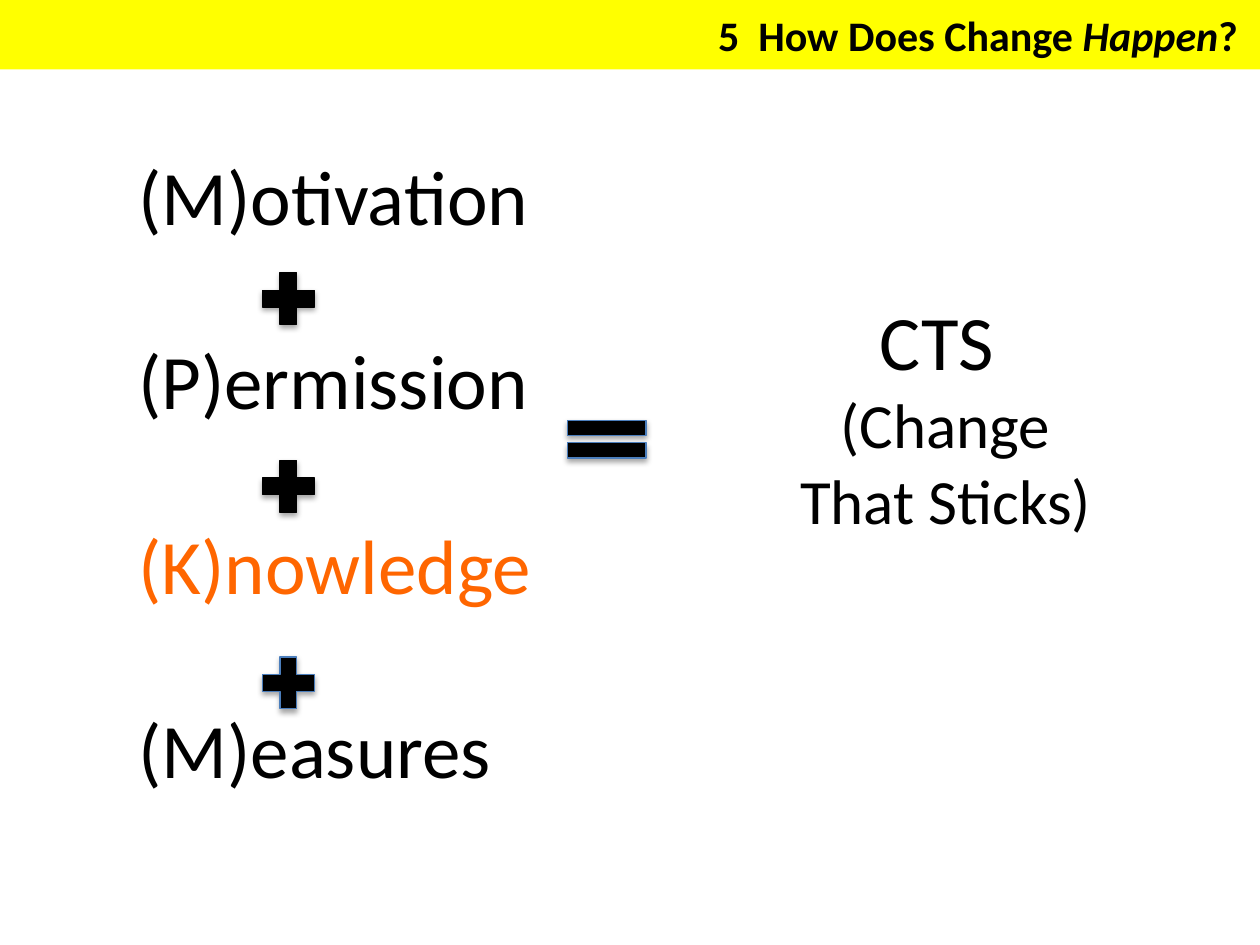
from pptx import Presentation
from pptx.dml.color import RGBColor
from pptx.enum.shapes import MSO_SHAPE
from pptx.enum.text import MSO_ANCHOR, MSO_AUTO_SIZE, PP_ALIGN
from pptx.util import Inches, Pt

PLUS, EQUAL = MSO_SHAPE.MATH_PLUS, MSO_SHAPE.MATH_EQUAL
LEFT, CENTER, RIGHT = PP_ALIGN.LEFT, PP_ALIGN.CENTER, PP_ALIGN.RIGHT
MIDDLE = MSO_ANCHOR.MIDDLE
FIXED, GROW = MSO_AUTO_SIZE.NONE, MSO_AUTO_SIZE.SHAPE_TO_FIT_TEXT

BLACK = RGBColor(0x00, 0x00, 0x00)
YELLOW = RGBColor(0xFF, 0xFF, 0x00)
ORANGE = RGBColor(0xFF, 0x66, 0x00)
BLUE = RGBColor(0x4B, 0x7E, 0xBC)

WIDTH, HEIGHT = Inches(10), Inches(7.5)
TERMS = [("(M)otivation", BLACK), ("(P)ermission", BLACK),
         ("(K)nowledge", ORANGE), ("(M)easures", BLACK)]
PLUSES = [(2.09, BLACK), (3.58, BLACK), (5.14, BLUE)]


def add_run(p, text, size, color=BLACK, **formats):
    """Append a formatted run to a paragraph."""
    r = p.add_run()
    r.text = text
    r.font.color.rgb = color
    for name, value in {"name": "Calibri", "size": Pt(size), **formats}.items():
        setattr(r.font, name, value)


def add_title(s, box):
    """Turn the title placeholder into the yellow band."""
    sp = s.shapes.title
    sp.left, sp.top, sp.width, sp.height = box
    sp.fill.solid()
    sp.fill.fore_color.rgb = YELLOW
    tf = sp.text_frame
    for name, value in {"auto_size": FIXED, "vertical_anchor": MIDDLE}.items():
        setattr(tf, name, value)
    p = tf.paragraphs[0]
    p.alignment = RIGHT
    for text, italic in [("5  How Does Change ", False), ("Happen", True), ("? ", False)]:
        add_run(p, text, 24, bold=True, italic=italic)


def add_lines(s, box, lines, align, gap=0):
    """Add a text box with one paragraph per (text, size, colour) line."""
    tf = s.shapes.add_textbox(*box).text_frame
    tf.word_wrap, tf.auto_size = True, GROW
    for i, line in enumerate(lines):
        p = tf.add_paragraph() if i else tf.paragraphs[0]
        p.alignment = align
        p.space_before = Pt(gap if i else 0)
        add_run(p, *line)


def add_sign(s, kind, box, line_color):
    """Add a black maths sign that keeps the theme shadow."""
    sp = s.shapes.add_shape(kind, *box)
    sp.fill.solid()
    sp.fill.fore_color.rgb = BLACK
    sp.line.color.rgb = line_color
    sp.line.width = Pt(0.75)


def add_sum(s, box):
    """Stack the four terms with a plus sign in each gap."""
    add_lines(s, box, [(text, 44, color) for text, color in TERMS], LEFT, 52.5)
    side = Inches(0.56)
    for top, color in PLUSES:
        add_sign(s, PLUS, (box[0] + Inches(1.01), Inches(top), side, side), color)


def add_result(s, box):
    """Place the equals sign and the result to its right."""
    left, top, width, height = box
    sign = (left, top + Inches(0.95), Inches(0.85), Inches(0.51))
    add_sign(s, EQUAL, sign, BLUE)
    indent = Inches(1.71)
    add_lines(s, (left + indent, top, width - indent, height),
              [("CTS ", 44), ("(Change That Sticks)", 36)], CENTER)


def main():
    """Build and save the slide."""
    prs = Presentation()
    prs.slide_width, prs.slide_height = WIDTH, HEIGHT
    s = prs.slides.add_slide(prs.slide_layouts[5])
    add_title(s, (0, 0, WIDTH, Inches(0.55)))
    add_sum(s, (Inches(1), Inches(1.13), Inches(4.24), Inches(5.28)))
    add_result(s, (Inches(4.39), Inches(2.28), Inches(4.52), Inches(2.05)))
    prs.save("out.pptx")


if __name__ == "__main__":
    main()
